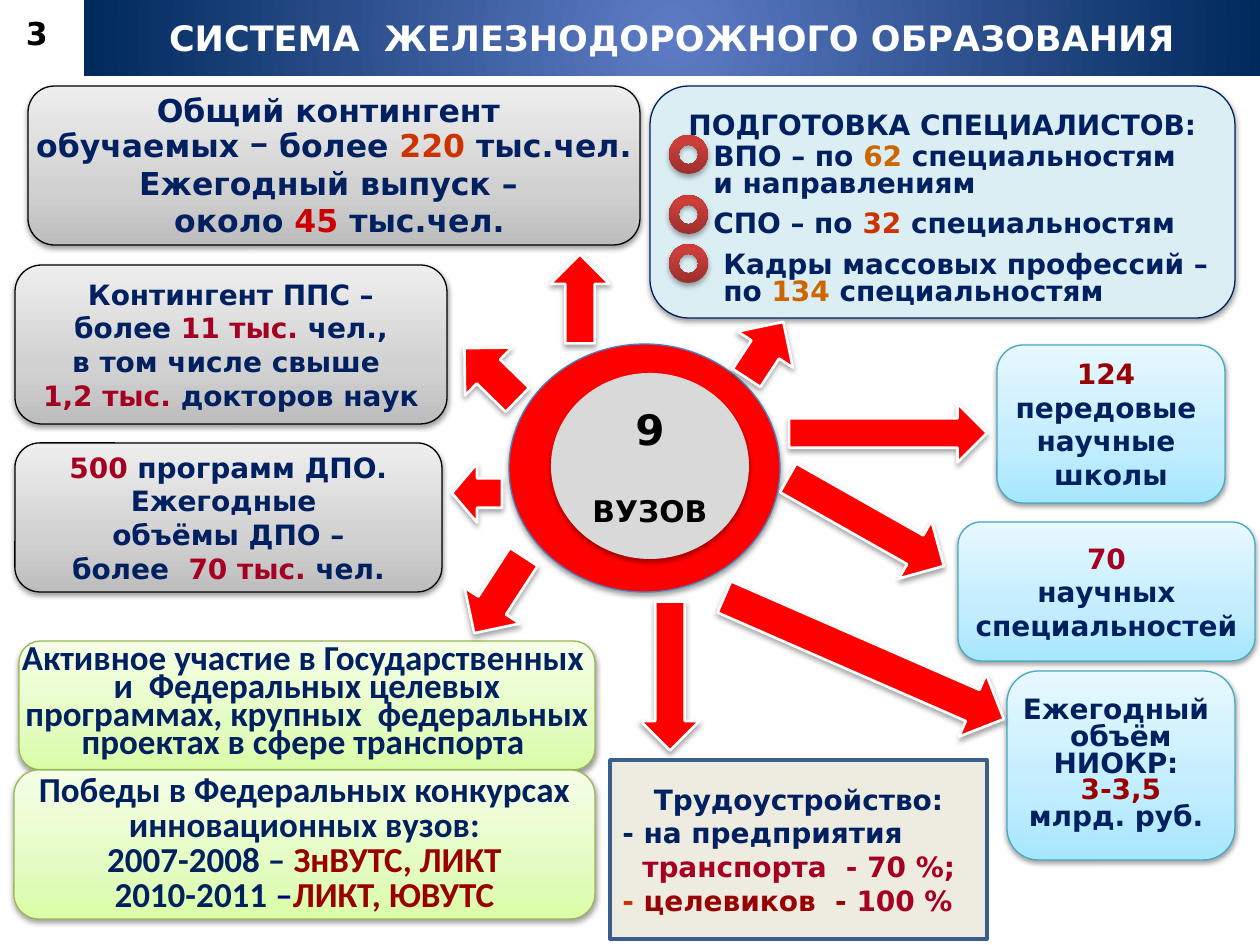
import pptx
import pptx.dml.color
import pptx.enum.shapes
import pptx.enum.text
import pptx.oxml
import pptx.oxml.ns
import pptx.util
from lxml import etree

PX = 914400 / 126
NAVY, RED, CRIMSON, MAROON, RUST, OCHRE = "002060", "FF0000", "A50021", "990000", "CC3300", "CC6600"
SHAPE = pptx.enum.shapes.MSO_SHAPE
ALIGN = pptx.enum.text.PP_ALIGN
SANS = "DejaVu Sans"
rgb = pptx.dml.color.RGBColor.from_string
qn = pptx.oxml.ns.qn

prs = pptx.Presentation()
prs.slide_width = round(1260 * PX)
prs.slide_height = round(945 * PX)
sp = prs.slides.add_slide(prs.slide_layouts[6]).shapes


def add_shape(kind, box, fill, line=None, width=0.75, shadow=None, angle=0):
    s = sp.add_shape(kind, *[round(v * PX) for v in box])
    s.rotation = angle
    if isinstance(fill, str):
        s.fill.solid()
        s.fill.fore_color.rgb = rgb(fill)
    else:
        stops, direction = fill
        s.fill.gradient()
        xml = "".join(f'<a:gs pos="{pos * 1000}"><a:srgbClr val="{c}"/></a:gs>' for pos, c in stops)
        grad = pptx.oxml.parse_xml(
            f'<a:gradFill {pptx.oxml.ns.nsdecls("a")} rotWithShape="1">'
            f"<a:gsLst>{xml}</a:gsLst>{direction}</a:gradFill>")
        spPr = s._element.spPr
        spPr.replace(spPr.find(qn("a:gradFill")), grad)
    if line:
        s.line.color.rgb = rgb(line)
        s.line.width = pptx.util.Pt(width)
    else:
        s.line.fill.background()
    s.shadow.inherit = False
    if shadow:
        dist, alpha = shadow
        effects = s._element.spPr.find(qn("a:effectLst"))
        outer = etree.SubElement(effects, qn("a:outerShdw"), blurRad="40000", dist=str(dist),
                                 dir="5400000", rotWithShape="0")
        color = etree.SubElement(outer, qn("a:srgbClr"), val="000000")
        etree.SubElement(color, qn("a:alpha"), val=str(alpha * 1000))
    return s


def write(s, lines, size=16, font=SANS, color=NAVY, spacing=None, wrap=False):
    tf = s.text_frame
    tf.word_wrap = wrap
    tf.vertical_anchor = pptx.enum.text.MSO_ANCHOR.MIDDLE
    for i, line in enumerate(lines):
        p = tf.add_paragraph() if i else tf.paragraphs[0]
        p.alignment = ALIGN.CENTER
        p.font.size = pptx.util.Pt(size)
        p.font.name = font
        p.font.bold = True
        p.font.color.rgb = rgb(color)
        if spacing:
            p.line_spacing = pptx.util.Pt(spacing)
        for part in [line] if isinstance(line, str) else line:
            text, tint = (part, color) if isinstance(part, str) else part
            r = p.add_run()
            r.text = text
            if tint != color:
                r.font.color.rgb = rgb(tint)
    return tf.paragraphs


UPWARD = '<a:lin ang="16200000" scaled="0"/>'
RADIAL = '<a:path path="circle"><a:fillToRect l="50000" t="50000" r="50000" b="50000"/></a:path>'
GREY = ([(0, "BDBDBD"), (35, "D1D1D1"), (100, "EEEEEE")], UPWARD)
BLUE = ([(0, "A7E6FF"), (35, "C1EDFF"), (100, "E7F8FF")], UPWARD)
GREEN = ([(0, "DAFDA7"), (35, "E4FCC2"), (100, "F5FFE7")], UPWARD)
BRICK = ([(0, "9C2F2D"), (80, "CB3E3A"), (100, "CE3B37")], UPWARD)
BANNER = ([(0, "5E7CC5"), (100, "00295C")], RADIAL)
SOFT, DEEP = (20000, 38), (23000, 35)

add_shape(SHAPE.DONUT, (509, 344, 271, 248), RED, "4B7EBC", shadow=SOFT)

cards = [
    ((28, 86, 612, 159), GREY, "000000", 18, SANS, 20.8, [
        "Общий контингент ",
        ["обучаемых", " – ", "более ", ("220 ", RUST), "тыс.чел."],
        "Ежегодный выпуск – ",
        [" около ", ("45 ", "CC0000"), "тыс.чел."]]),
    ((15, 265, 432, 159), GREY, "000000", 16, SANS, None, [
        "Контингент ППС –",
        ["более ", ("11 тыс. ", CRIMSON), "чел.,"],
        "в том числе свыше ",
        [("1,2 тыс. ", CRIMSON), "докторов наук"]]),
    ((15, 443, 427, 149), GREY, "000000", 16, SANS, None, [
        [("500 ", CRIMSON), "программ ДПО."],
        "Ежегодные ",
        "объёмы ДПО –",
        ["более  ", ("70 тыс. ", CRIMSON), "чел."]]),
    ((19, 641, 576, 129), GREEN, "98B955", 20, "Calibri", 16, [
        "Активное участие в Государственных ",
        "и  Федеральных целевых",
        "программах, крупных  федеральных",
        "проектах в сфере транспорта "]),
    ((14, 770, 581, 149), GREEN, "98B955", 20, "Calibri", 20, [
        "Победы в Федеральных конкурсах",
        "инновационных вузов:",
        ["2007-2008 – ", ("ЗнВУТС, ЛИКТ", MAROON)],
        ["2010-2011 ", ("–", "00007E"), ("ЛИКТ, ЮВУТС", MAROON)]]),
    ((997, 345, 228, 158), BLUE, "46AAC5", 16, SANS, None, [
        [("124 ", MAROON)], "передовые ", "научные ", "школы"]),
    ((958, 522, 297, 139), BLUE, "46AAC5", 16, SANS, None, [
        [("70", CRIMSON)], "научных", "специальностей"]),
    ((1007, 671, 228, 189), BLUE, "46AAC5", 16, SANS, 15.2, [
        "Ежегодный ", "объём", "НИОКР: ", [("3-3,5", MAROON)], "млрд. руб. "]),
]
for box, fill, line, size, font, spacing, lines in cards:
    s = add_shape(SHAPE.ROUNDED_RECTANGLE, box, fill, line, shadow=SOFT)
    paragraphs = write(s, lines, size, font, spacing=spacing)
    for r in paragraphs[1].runs:
        if r.text == " – ":
            r.font.name = "Calibri"
            r.font.size = pptx.util.Pt(24)

s = add_shape(SHAPE.ROUNDED_RECTANGLE, (650, 86, 585, 232), "DBEEF4", NAVY, shadow=SOFT)
s.text_frame.margin_left = s.text_frame.margin_right = 0
training = write(s, [
    "ПОДГОТОВКА СПЕЦИАЛИСТОВ:",
    ["ВПО – по ", ("62 ", OCHRE), "специальностям"],
    "и направлениям",
    ["СПО – по ", ("32 ", RUST), "специальностям"],
    "Кадры массовых профессий –",
    ["по ", ("134 ", OCHRE), "специальностям"]], wrap=True)
for p, spacing in zip(training, (24.8, 18, 15.2, 23.2, 23.2, 15.2)):
    p.line_spacing = pptx.util.Pt(spacing)
for p, indent in zip(training[1:], (52, 52, 52, 62, 62)):
    p.alignment = ALIGN.LEFT
    p._p.get_or_add_pPr().set("marL", str(round(indent * PX)))
for y in (135, 195, 244):
    add_shape(SHAPE.DONUT, (669, y, 39, 39), BRICK, shadow=DEEP)

s = add_shape(SHAPE.OVAL, (551, 373, 198, 186), "D9D9D9", shadow=DEEP)
count, label = write(s, ["9", "ВУЗОВ"], 17, color="000000")
count.font.size = pptx.util.Pt(24)
label.space_before = pptx.util.Pt(22)

arrows = [
    (580, 299, 59, 89, 0), (765, 350, 66, 67, 33.2), (888, 433, 59, 198, 90),
    (866, 522, 66, 179, 119.5), (864, 658, 68, 305, 113.6), (670, 676, 59, 149, 180),
    (499, 595, 66, 91, 213), (477, 493, 59, 50, 270), (491, 374, 67, 74, 314.3),
]
for cx, cy, w, h, angle in arrows:
    add_shape(SHAPE.UP_ARROW, (cx - w / 2, cy - h / 2, w, h), RED, "FFFFFF", 1.5, DEEP, angle)

s = add_shape(SHAPE.RECTANGLE, (610, 760, 377, 179), "EEECE1", "3A5F8C", 2)
jobs = write(s, [
    "Трудоустройство:",
    "- на предприятия",
    [("транспорта  - 70 %;", CRIMSON)],
    [("- ", RUST), ("целевиков  -", MAROON), (" 100 %", CRIMSON)]], wrap=True)
for p in jobs[1:]:
    p.alignment = ALIGN.LEFT
jobs[2]._p.get_or_add_pPr().set("marL", str(round(20 * PX)))

s = add_shape(SHAPE.RECTANGLE, (84, 0, 1176, 76), BANNER)
write(s, ["СИСТЕМА  ЖЕЛЕЗНОДОРОЖНОГО ОБРАЗОВАНИЯ"], 20, color="FFFFFF", wrap=True)

s = sp.add_textbox(*[round(v * PX) for v in (0, 10, 74, 45)])
write(s, ["3"], 18, color="000000", wrap=True)

prs.save("out.pptx")
